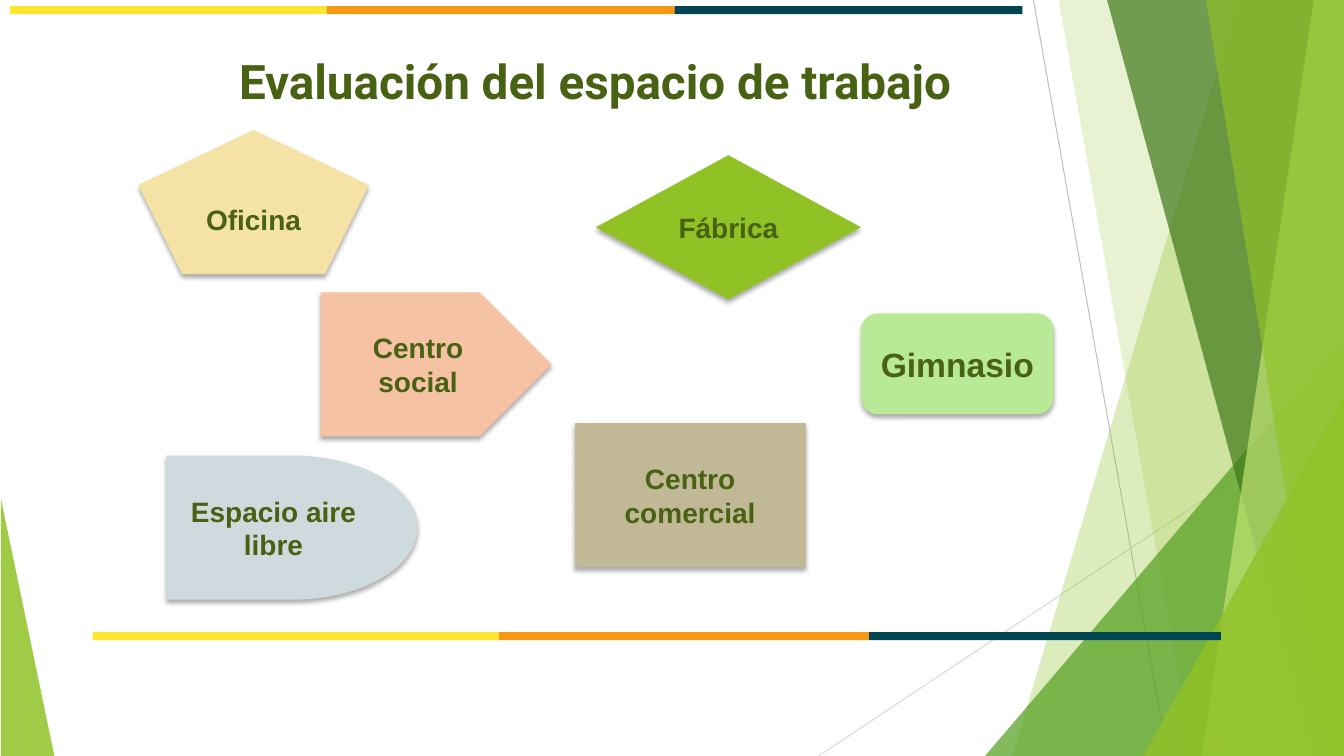
from dataclasses import dataclass

from lxml.etree import SubElement
from pptx import Presentation
from pptx.dml.color import RGBColor
from pptx.enum.shapes import MSO_CONNECTOR, MSO_SHAPE
from pptx.enum.text import MSO_ANCHOR, MSO_AUTO_SIZE, PP_ALIGN
from pptx.oxml.ns import qn
from pptx.shapes.autoshape import Shape
from pptx.slide import Slide
from pptx.util import Inches, Pt


@dataclass(frozen=True)
class Theme:
    text: str = "486113"
    lime: str = "90C226"
    green: str = "54A021"
    forest: str = "3F7819"
    pale_lime: str = "C0E474"
    yellow: str = "FEE530"
    orange: str = "F59914"
    teal: str = "014552"
    title_font: str = "Roboto"
    label_font: str = "Arial"
    title_size: int = 34
    label_size: int = 20
    large_label_size: int = 24


@dataclass(frozen=True)
class Ray:
    top_x: float
    bottom_x: float
    color: str
    opacity: int


@dataclass(frozen=True)
class Corner:
    left: float
    top: float
    width: float
    apex: float
    color: str
    opacity: int


@dataclass(frozen=True)
class Hairline:
    start: tuple[float, float]
    end: tuple[float, float]
    color: str


@dataclass(frozen=True)
class Stripe:
    top: float
    edges: tuple[float, float, float, float]


@dataclass(frozen=True)
class Place:
    label: str
    kind: MSO_SHAPE
    left: float
    top: float
    color: str
    width: float = 2.29
    height: float = 1.43
    size: int = 20


THEME = Theme()
WIDTH, HEIGHT = 13.33, 7.5
STRIPE_HEIGHT = 0.08

HAIRLINES = [
    Hairline((10.25, 0), (11.58, HEIGHT), "BFBFBF"),
    Hairline((WIDTH, 4.03), (8.12, HEIGHT), "D9D9D9"),
]
FACETS: list[Ray | Corner] = [
    Ray(12.28, 10.04, THEME.lime, 30),
    Ray(10.5, 11.83, THEME.lime, 20),
    Corner(9.77, 3.33, 3.56, 1, THEME.green, 72),
    Ray(10.98, 13.01, THEME.forest, 70),
    Ray(13.03, 11.92, THEME.pale_lime, 70),
    Ray(11.96, 13.18, THEME.lime, 65),
    Corner(11.34, 3.93, 1.99, 1, THEME.lime, 80),
    Corner(0.01, 4.95, 0.53, 0, THEME.lime, 85),
]
STRIPES = [
    Stripe(6.27, (0.92, 4.95, 8.62, 12.11)),
    Stripe(0.06, (0.1, 3.24, 6.69, 10.14)),
]
PLACES = [
    Place("Oficina", MSO_SHAPE.REGULAR_PENTAGON, 1.37, 1.29, "F5E3A5"),
    Place("Centro comercial", MSO_SHAPE.FLOWCHART_PREDEFINED_PROCESS, 5.7, 4.2, "C1B995"),
    Place("Espacio aire libre", MSO_SHAPE.FLOWCHART_DELAY, 1.65, 4.52, "CFDADF", width=2.49),
    Place("Fábrica", MSO_SHAPE.FLOWCHART_DECISION, 5.91, 1.54, THEME.lime, width=2.63),
    Place("Gimnasio", MSO_SHAPE.ROUNDED_RECTANGLE, 8.54, 3.11, "B7E996",
          width=1.91, height=1, size=THEME.large_label_size),
    Place("Centro social", MSO_SHAPE.PENTAGON, 3.18, 2.9, "F5C2A3"),
]


def paint(shape: Shape, color: str, opacity: int = 100) -> None:
    shape.shadow.inherit = False
    shape.line.fill.background()
    shape.fill.solid()
    shape.fill.fore_color.rgb = RGBColor.from_string(color)
    if opacity < 100:
        tint = shape._element.spPr.find(qn("a:solidFill"))[0]
        SubElement(tint, qn("a:alpha"), val=str(opacity * 1000))


def add_block(page: Slide, kind: MSO_SHAPE, left: float, top: float,
              width: float, height: float) -> Shape:
    return page.shapes.add_shape(kind, Inches(left), Inches(top), Inches(width), Inches(height))


def draw_hairline(page: Slide, hairline: Hairline) -> None:
    points = [Inches(value) for value in hairline.start + hairline.end]
    connector = page.shapes.add_connector(MSO_CONNECTOR.STRAIGHT, *points)
    connector.line.width = Pt(0.75)
    connector.line.color.rgb = RGBColor.from_string(hairline.color)
    SubElement(connector._element.spPr, qn("a:effectLst"))


def draw_ray(page: Slide, ray: Ray) -> None:
    builder = page.shapes.build_freeform(Inches(ray.top_x), 0)
    corners = [(WIDTH, 0), (WIDTH, HEIGHT), (ray.bottom_x, HEIGHT)]
    builder.add_line_segments([(Inches(x), Inches(y)) for x, y in corners], close=True)
    paint(builder.convert_to_shape(), ray.color, ray.opacity)


def draw_corner(page: Slide, corner: Corner) -> None:
    triangle = add_block(page, MSO_SHAPE.ISOSCELES_TRIANGLE, corner.left, corner.top,
                         corner.width, HEIGHT - corner.top)
    triangle.adjustments[0] = corner.apex
    paint(triangle, corner.color, corner.opacity)


def draw_stripe(page: Slide, stripe: Stripe) -> None:
    colors = (THEME.yellow, THEME.orange, THEME.teal)
    for left, right, color in zip(stripe.edges, stripe.edges[1:], colors):
        segment = add_block(page, MSO_SHAPE.RECTANGLE, left, stripe.top,
                            right - left, STRIPE_HEIGHT)
        paint(segment, color)


def write(box: Shape, text: str, font: str, size: int) -> None:
    frame = box.text_frame
    frame.text = text
    frame.word_wrap = True
    frame.auto_size = MSO_AUTO_SIZE.NONE
    frame.vertical_anchor = MSO_ANCHOR.MIDDLE
    para = frame.paragraphs[0]
    para.alignment = PP_ALIGN.CENTER
    para.font.name = font
    para.font.size = Pt(size)
    para.font.bold = True
    para.font.color.rgb = RGBColor.from_string(THEME.text)


def add_shadow(shape: Shape) -> None:
    effects = shape._element.spPr.find(qn("a:effectLst"))
    shadow = SubElement(effects, qn("a:outerShdw"), blurRad=str(Pt(3.5)), dist=str(Pt(2.2)),
                        dir="5400000", rotWithShape="0")
    color = SubElement(shadow, qn("a:srgbClr"), val="000000")
    SubElement(color, qn("a:alpha"), val="32000")


def draw_place(page: Slide, place: Place) -> None:
    shape = add_block(page, place.kind, place.left, place.top, place.width, place.height)
    paint(shape, place.color)
    add_shadow(shape)
    write(shape, place.label, THEME.label_font, place.size)


def main() -> None:
    deck = Presentation()
    deck.slide_width, deck.slide_height = Inches(WIDTH), Inches(HEIGHT)
    page = deck.slides.add_slide(deck.slide_layouts[5])
    title = page.shapes.title
    title.left, title.top = Inches(1.96), Inches(0.46)
    title.width, title.height = Inches(7.89), Inches(0.67)
    write(title, "Evaluación del espacio de trabajo", THEME.title_font, THEME.title_size)
    for hairline in HAIRLINES:
        draw_hairline(page, hairline)
    for facet in FACETS:
        if isinstance(facet, Ray):
            draw_ray(page, facet)
        else:
            draw_corner(page, facet)
    for stripe in STRIPES:
        draw_stripe(page, stripe)
    for place in PLACES:
        draw_place(page, place)
    deck.save("out.pptx")


if __name__ == "__main__":
    main()
